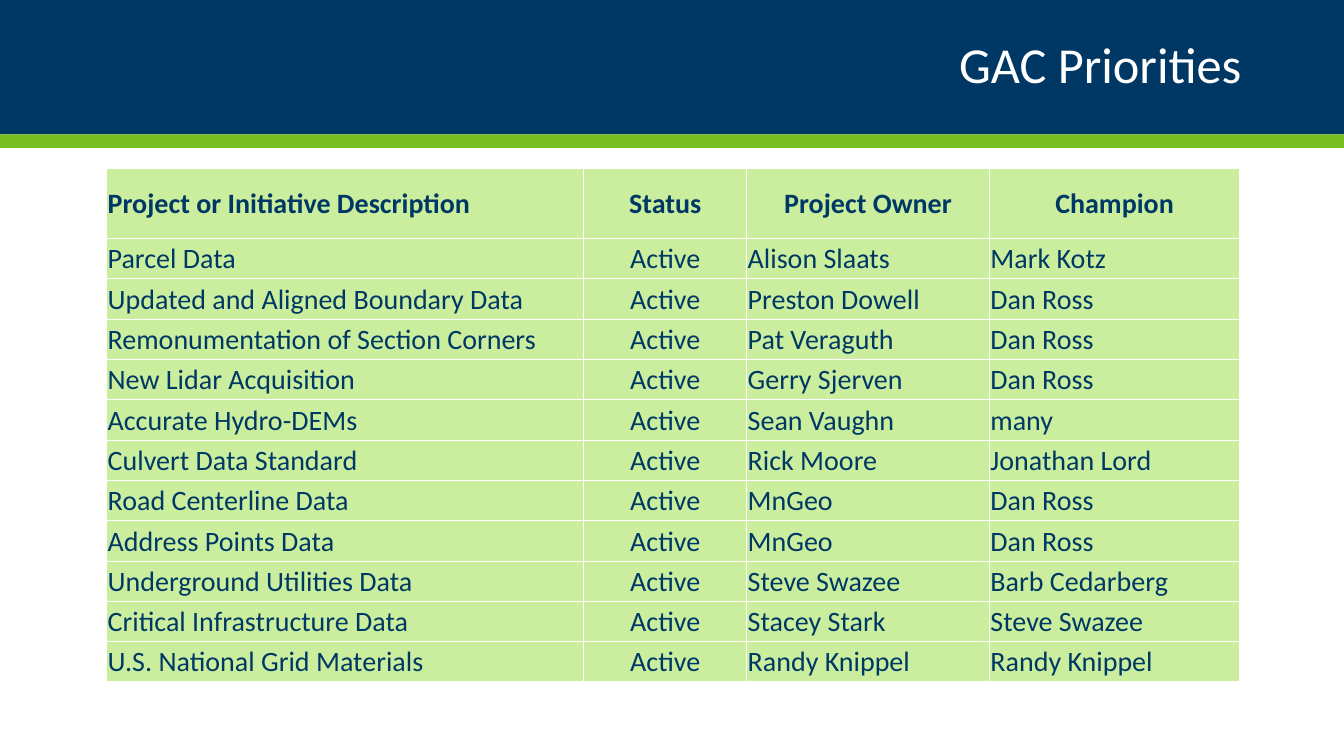
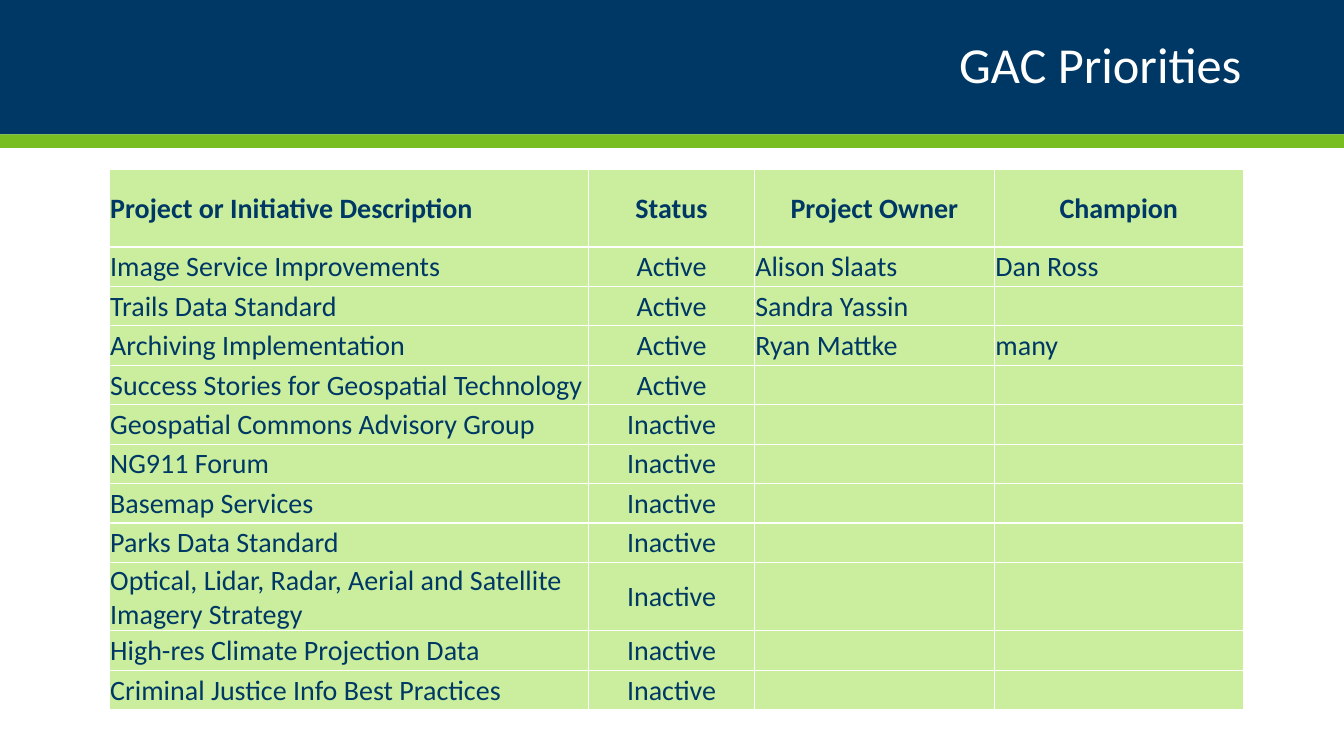
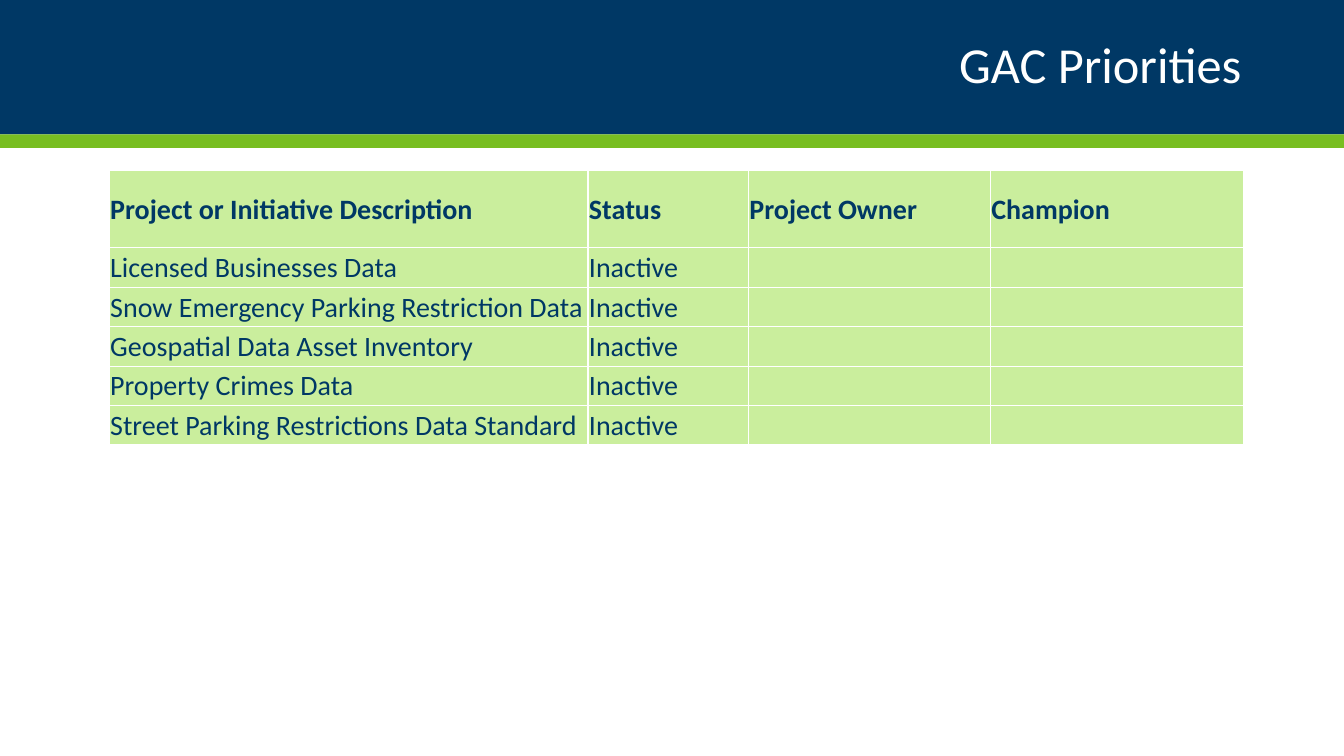
"""Build three slides that list the GAC priorities."""
import dataclasses
import itertools

import lxml.etree
import pptx
import pptx.dml.color
import pptx.enum.shapes
import pptx.enum.text
import pptx.oxml.ns
import pptx.util

Align = pptx.enum.text.PP_ALIGN
Middle = pptx.enum.text.MSO_ANCHOR.MIDDLE
LEFT, MID, RIGHT = Align.LEFT, Align.CENTER, Align.RIGHT


@dataclasses.dataclass(frozen=True)
class Theme:
    navy: str = "003865"
    green: str = "78BE21"
    pale: str = "CAEE9D"
    white: str = "FFFFFF"
    font: str = "Calibri"
    head: int = 36
    body: int = 20
    rule: int = 1
    cols: int = 160
    rows: int = 90


class Deck:
    def __init__(self, theme):
        self.theme = theme
        self.show = pptx.Presentation()
        self.show.slide_width = self.grid(theme.cols)
        self.show.slide_height = self.grid(theme.rows)
        self.slide = None

    def grid(self, count):
        return round(count * pptx.util.Inches(1) / 12)

    def tint(self, code):
        return pptx.dml.color.RGBColor.from_string(code)

    def page(self, title):
        self.slide = self.show.slides.add_slide(self.show.slide_layouts[6])
        self.band(0, 16, self.theme.navy)
        self.band(16, 1.6, self.theme.green)
        self.title(title)

    def band(self, top, high, code):
        box = map(self.grid, (0, top, self.theme.cols, high))
        shape = self.slide.shapes.add_shape(
            pptx.enum.shapes.MSO_SHAPE.RECTANGLE, *box)
        shape.shadow.inherit = False
        shape.fill.solid()
        shape.fill.fore_color.rgb = self.tint(code)
        shape.line.fill.background()

    def words(self, para, text, size, code, bold=False):
        run = para.add_run()
        run.text = text
        run.font.name = self.theme.font
        run.font.size = pptx.util.Pt(size)
        run.font.bold = bold
        run.font.color.rgb = self.tint(code)

    def title(self, text):
        box = map(self.grid, (11, 2, 138, 12))
        frame = self.slide.shapes.add_textbox(*box).text_frame
        frame.word_wrap = True
        frame.vertical_anchor = Middle
        para = frame.paragraphs[0]
        para.alignment = RIGHT
        para.line_spacing = 0.9
        self.words(para, text, self.theme.head, self.theme.white)

    def edge(self, cell):
        qn = pptx.oxml.ns.qn
        props = cell._tc.get_or_add_tcPr()
        for side in ("lnL", "lnR", "lnT", "lnB"):
            line = lxml.etree.SubElement(
                props, qn("a:" + side), w=str(pptx.util.Pt(self.theme.rule)))
            fill = lxml.etree.SubElement(line, qn("a:solidFill"))
            lxml.etree.SubElement(
                fill, qn("a:srgbClr"), val=self.theme.white)

    def cell(self, cell, text, align, bold):
        cell.vertical_anchor = Middle
        cell.margin_left = cell.margin_right = pptx.util.Inches(0.01)
        cell.margin_top = pptx.util.Inches(0.01)
        cell.margin_bottom = 0
        self.edge(cell)
        cell.fill.solid()
        cell.fill.fore_color.rgb = self.tint(self.theme.pale)
        if text:
            para = cell.text_frame.paragraphs[0]
            para.alignment = align
            self.words(para, text, self.theme.body, self.theme.navy, bold)

    def table(self, left, top, wides, first, high, heads, aligns, data):
        lines = [HEADS, *data]
        highs = [first] + [high] * len(data)
        box = map(self.grid, (left, top, sum(wides), sum(highs)))
        table = self.slide.shapes.add_table(
            len(lines), len(wides), *box).table
        table.first_row = table.horz_banding = False
        for col, wide in zip(table.columns, wides):
            col.width = self.grid(wide)
        for row, tall, line in zip(table.rows, highs, lines):
            row.height = self.grid(tall)
            head = line is HEADS
            sides = heads if head else aligns
            for cell, text, side in itertools.zip_longest(
                    row.cells, line, sides):
                self.cell(cell, text, side, head)


TITLE = "GAC Priorities"
HEADS = ("Project or Initiative Description", "Status",
         "Project Owner", "Champion")
FIRST = [
    ("Parcel Data", "Active", "Alison Slaats", "Mark Kotz"),
    ("Updated and Aligned Boundary Data", "Active",
     "Preston Dowell", "Dan Ross"),
    ("Remonumentation of Section Corners", "Active",
     "Pat Veraguth", "Dan Ross"),
    ("New Lidar Acquisition", "Active", "Gerry Sjerven", "Dan Ross"),
    ("Accurate Hydro-DEMs", "Active", "Sean Vaughn", "many"),
    ("Culvert Data Standard", "Active", "Rick Moore", "Jonathan Lord"),
    ("Road Centerline Data", "Active", "MnGeo", "Dan Ross"),
    ("Address Points Data", "Active", "MnGeo", "Dan Ross"),
    ("Underground Utilities Data", "Active",
     "Steve Swazee", "Barb Cedarberg"),
    ("Critical Infrastructure Data", "Active",
     "Stacey Stark", "Steve Swazee"),
    ("U.S. National Grid Materials", "Active",
     "Randy Knippel", "Randy Knippel"),
]
NEXT = [
    ("Image Service Improvements", "Active", "Alison Slaats", "Dan Ross"),
    ("Trails Data Standard", "Active", "Sandra Yassin"),
    ("Archiving Implementation", "Active", "Ryan Mattke", "many"),
    ("Success Stories for Geospatial Technology", "Active"),
    ("Geospatial Commons Advisory Group", "Inactive"),
    ("NG911 Forum", "Inactive"),
    ("Basemap Services", "Inactive"),
    ("Parks Data Standard", "Inactive"),
    ("Optical, Lidar, Radar, Aerial and Satellite Imagery Strategy",
     "Inactive"),
    ("High-res Climate Projection Data", "Inactive"),
    ("Criminal Justice Info Best Practices", "Inactive"),
]
LAST = [
    ("Licensed Businesses Data", "Inactive"),
    ("Snow Emergency Parking Restriction Data", "Inactive"),
    ("Geospatial Data Asset Inventory", "Inactive"),
    ("Property Crimes Data", "Inactive"),
    ("Street Parking Restrictions Data Standard", "Inactive"),
]


def main():
    deck = Deck(Theme())
    heads = (LEFT, MID, MID, MID)
    mixed = (LEFT, MID, LEFT, LEFT)
    plain = (LEFT,) * 4
    deck.page(TITLE)
    deck.table(12.7, 20, (56.8, 19.4, 28.9, 29.8), 8.4, 4.8,
               heads, mixed, FIRST)
    deck.page(TITLE)
    deck.table(13, 20.2, (57.1, 19.7, 28.6, 29.6), 9.2, 4.7,
               heads, mixed, NEXT)
    deck.page(TITLE)
    deck.table(13, 20.3, (57, 19.1, 28.8, 30.1), 9.2, 4.7,
               plain, plain, LAST)
    deck.show.save("out.pptx")


if __name__ == "__main__":
    main()
